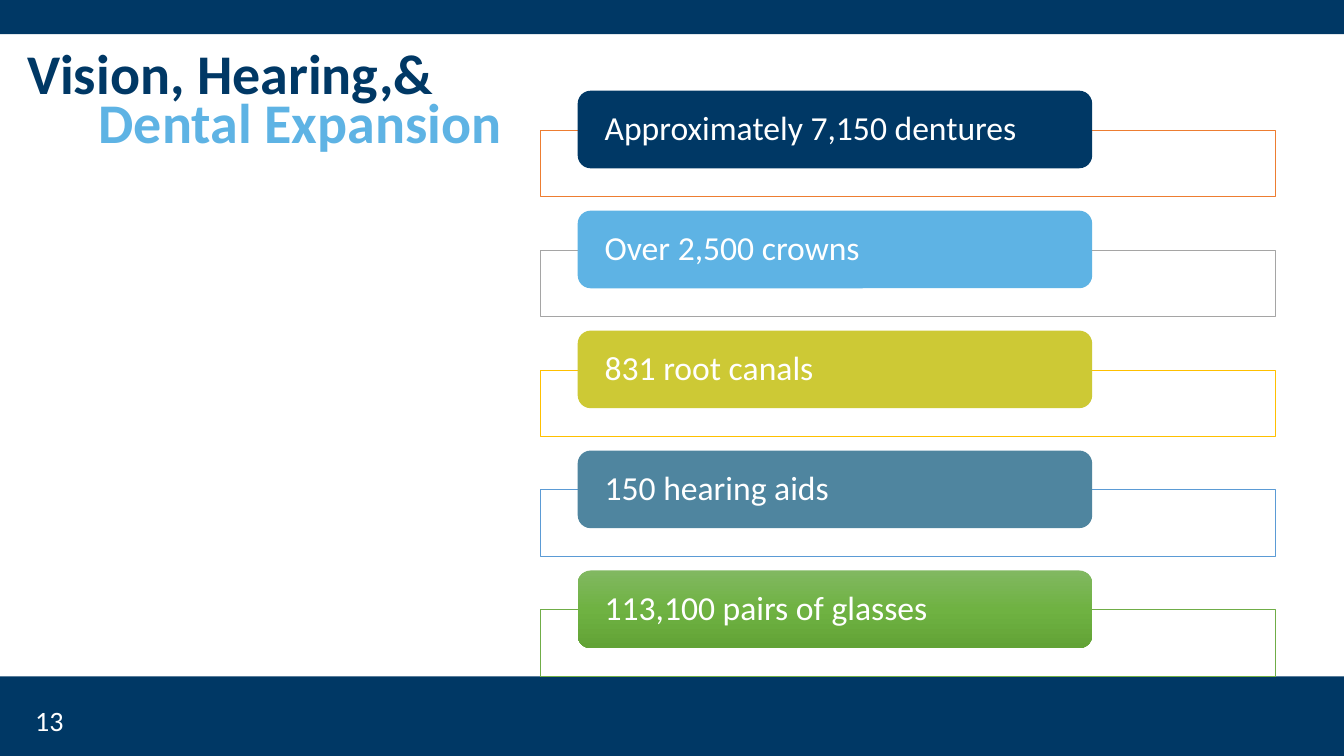
from copy import deepcopy

from pptx import Presentation
from pptx.dml.color import RGBColor
from pptx.enum.shapes import MSO_SHAPE
from pptx.enum.text import MSO_ANCHOR, MSO_AUTO_SIZE, PP_ALIGN
from pptx.oxml.ns import qn
from pptx.oxml.xmlchemy import OxmlElement
from pptx.util import Inches, Pt

RECT = MSO_SHAPE.RECTANGLE
ROUNDED = MSO_SHAPE.ROUNDED_RECTANGLE
TOP, MIDDLE = MSO_ANCHOR.TOP, MSO_ANCHOR.MIDDLE
LEFT = PP_ALIGN.LEFT
NO_AUTOFIT = MSO_AUTO_SIZE.NONE

FONT = "Calibri"
SLIDE_W, SLIDE_H = 13.33, 7.5
COLORS = {
    "navy": "003865", "sky": "5EB3E4", "white": "FFFFFF",
    "lime": "CDC935", "steel": "4F859F",
    "green_light": "81B861", "green": "6FB242", "green_dark": "62A336",
    "orange_line": "ED7D31", "gray_line": "A5A5A5", "gold_line": "FFC000",
    "blue_line": "5B9BD5", "green_line": "70AD47",
}
SERVICES = [
    ("Approximately 7,150 dentures", ["navy"], "orange_line"),
    ("Over 2,500 crowns", ["sky"], "gray_line"),
    ("831 root canals", ["lime"], "gold_line"),
    ("150 hearing aids", ["steel"], "blue_line"),
    ("113,100 pairs of glasses", ["green_light", "green", "green_dark"], "green_line"),
]


def rgb(name):
    """Return the named palette colour."""
    return RGBColor.from_string(COLORS[name])


def fill_shape(shape, names):
    """Fill with one colour, or with an even top-to-bottom blend of several."""
    if len(names) == 1:
        shape.fill.solid()
        shape.fill.fore_color.rgb = rgb(names[0])
        return
    shape.fill.gradient()
    shape.fill.gradient_angle = 270
    stop_list = next(shape._element.spPr.iter(qn("a:gsLst")))
    for _ in names[2:]:
        stop_list.append(deepcopy(stop_list[0]))
    for i, (stop, name) in enumerate(zip(shape.fill.gradient_stops, names)):
        stop.position = i / (len(names) - 1)
        stop.color.rgb = rgb(name)


def add_block(slide, kind, box, fills, line=None):
    """Add a flat filled shape in the box, outlined only if a line is named."""
    block = slide.shapes.add_shape(kind, *map(Inches, box))
    block.shadow.inherit = False
    fill_shape(block, fills)
    if line:
        block.line.color.rgb = rgb(line)
        block.line.width = Pt(0.5)
    else:
        block.line.fill.background()
    return block


def write_line(frame, text, size, color, bold=False, anchor=TOP):
    """Write one left-aligned line into a text frame."""
    frame.word_wrap = True
    frame.auto_size = NO_AUTOFIT
    frame.vertical_anchor = anchor
    line = frame.paragraphs[0]
    line.text = text
    line.alignment = LEFT
    line.font.name = FONT
    line.font.size = Pt(size)
    line.font.bold = bold
    line.font.color.rgb = rgb(color)


def add_bands(slide, top_height, bottom_height):
    """Draw the full-width bands at the slide's top and bottom."""
    for top, height in ((0, top_height), (SLIDE_H - bottom_height, bottom_height)):
        add_block(slide, RECT, (0, top, SLIDE_W, height), ["navy"])


def add_heading(slide, left, top, width, height):
    """Set the title and its stepped second line."""
    title = slide.shapes.title
    title.left, title.top = Inches(left), Inches(top)
    title.width, title.height = Inches(width), Inches(height)
    write_line(title.text_frame, "Vision, Hearing,&", 40, "navy", bold=True)
    expansion = slide.shapes.add_textbox(
        Inches(left + 0.71), Inches(top + 0.49), Inches(width), Inches(height))
    write_line(expansion.text_frame, "Dental Expansion", 40, "sky", bold=True)


def add_service_list(slide, left, top, width, pitch):
    """Stack one framed label per service at an even pitch."""
    for i, (text, fills, line) in enumerate(SERVICES):
        row_top = top + i * pitch
        frame = add_block(slide, RECT, (left, row_top + 0.39, width, 0.66),
                          ["white"], line)
        opacity = OxmlElement("a:alpha")
        opacity.set("val", "90000")
        frame._element.spPr.find(qn("a:solidFill"))[0].append(opacity)
        label = add_block(slide, ROUNDED,
                          (left + 0.37, row_top, width * 0.7, 0.77), fills)
        label.text_frame.margin_left = label.text_frame.margin_right = Inches(0.23)
        label.text_frame.margin_top = label.text_frame.margin_bottom = 0
        write_line(label.text_frame, text, 24, "white", anchor=MIDDLE)
        label.text_frame.paragraphs[0].line_spacing = 0.9


def add_page_number(slide, left, top, width, height):
    """Place the page number on the bottom band."""
    number = slide.shapes.add_textbox(*map(Inches, (left, top, width, height)))
    write_line(number.text_frame, "13", 20, "white")


def main():
    """Build and save the slide."""
    deck = Presentation()
    deck.slide_width, deck.slide_height = Inches(SLIDE_W), Inches(SLIDE_H)
    slide = deck.slides.add_slide(deck.slide_layouts[5])
    add_bands(slide, 0.34, 0.79)
    add_service_list(slide, 5.36, 0.9, 7.29, 1.19)
    add_heading(slide, 0.17, 0.33, 6.34, 0.77)
    add_page_number(slide, 0.25, 6.93, 3, 0.4)
    deck.save("out.pptx")


if __name__ == "__main__":
    main()
